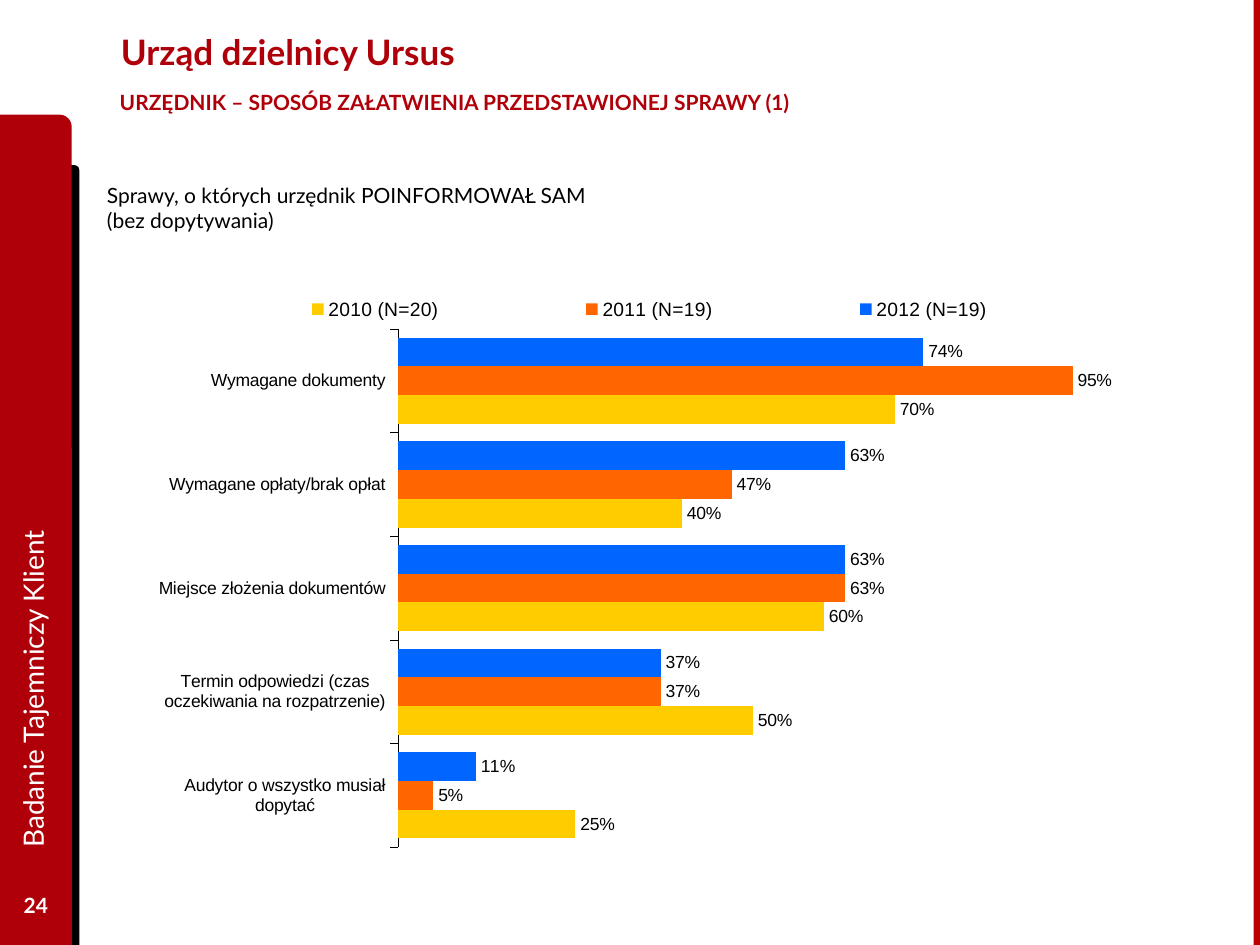
from lxml.etree import SubElement
from pptx import Presentation
from pptx.chart.data import CategoryChartData
from pptx.dml.color import RGBColor
from pptx.enum.chart import XL_CHART_TYPE, XL_LABEL_POSITION, XL_LEGEND_POSITION, XL_TICK_MARK
from pptx.enum.shapes import MSO_SHAPE
from pptx.enum.text import MSO_ANCHOR, PP_ALIGN
from pptx.oxml.ns import qn
from pptx.util import Inches, Pt

RED = RGBColor(0xAF, 0x00, 0x0A)
EDGE_RED = RGBColor(0xBD, 0x00, 0x00)
BLACK = RGBColor(0, 0, 0)
WHITE = RGBColor(0xFF, 0xFF, 0xFF)
BLUE = RGBColor(0x00, 0x66, 0xFF)
ORANGE = RGBColor(0xFF, 0x66, 0x00)
YELLOW = RGBColor(0xFF, 0xCC, 0x00)

CATEGORIES = [
    "Wymagane dokumenty",
    "Wymagane opłaty/brak opłat",
    "Miejsce złożenia dokumentów",
    "Termin odpowiedzi (czas oczekiwania na rozpatrzenie)",
    "Audytor o wszystko musiał dopytać",
]
SERIES = [
    ("2012 (N=19)", (0.74, 0.63, 0.63, 0.37, 0.11), BLUE),
    ("2011 (N=19)", (0.95, 0.47, 0.63, 0.37, 0.05), ORANGE),
    ("2010 (N=20)", (0.70, 0.40, 0.60, 0.50, 0.25), YELLOW),
]


def set_font(font, size, color, name="Lato", bold=False):
    font.name = name
    font.size = Pt(size)
    font.bold = bold
    font.color.rgb = color


def add_block(slide, kind, left, top, width, height, color, rounding=None):
    shape = slide.shapes.add_shape(
        kind, Inches(left), Inches(top), Inches(width), Inches(height))
    shape.shadow.inherit = False
    shape.fill.solid()
    shape.fill.fore_color.rgb = color
    shape.line.fill.background()
    if rounding is not None:
        shape.adjustments[0] = rounding


def fill_text(shape, text, size, color, bold=False, align=PP_ALIGN.LEFT,
              anchor=MSO_ANCHOR.TOP, wrap=True):
    frame = shape.text_frame
    frame.text = text
    frame.word_wrap = wrap
    frame.vertical_anchor = anchor
    paragraph = frame.paragraphs[0]
    paragraph.alignment = align
    for run in paragraph.runs:
        set_font(run.font, size, color, bold=bold)


def add_text(slide, left, top, width, height, text, size, color, **options):
    box = slide.shapes.add_textbox(
        Inches(left), Inches(top), Inches(width), Inches(height))
    fill_text(box, text, size, color, **options)
    return box


def set_title(slide, text):
    title = slide.shapes.title
    title.left, title.top = Inches(0.86), Inches(0.05)
    title.width, title.height = Inches(7.77), Inches(0.72)
    fill_text(title, text, 20, RED, bold=True, anchor=MSO_ANCHOR.MIDDLE)


def set_layout(parent, x, y, width, height, inner=False):
    """Place the plot area or the legend by fractions of the chart."""
    layout = parent.find(qn("c:layout"))
    if layout is None:
        layout = SubElement(parent, qn("c:layout"))
        position = 1 if parent.tag == qn("c:legend") else 0
        parent.insert(position, layout)
    manual = SubElement(layout, qn("c:manualLayout"))
    settings = [("layoutTarget", "inner")] if inner else []
    settings += [("xMode", "edge"), ("yMode", "edge"),
                 ("x", x), ("y", y), ("w", width), ("h", height)]
    for tag, value in settings:
        SubElement(manual, qn(f"c:{tag}")).set("val", str(value))


def format_axes(chart):
    category_axis = chart.category_axis
    category_axis.reverse_order = True
    category_axis.has_major_gridlines = False
    category_axis.major_tick_mark = XL_TICK_MARK.OUTSIDE
    category_axis.format.line.color.rgb = BLACK
    category_axis.format.line.width = Pt(0.25)
    set_font(category_axis.tick_labels.font, 10, BLACK, "Arial")

    value_axis = chart.value_axis
    value_axis.minimum_scale = 0
    value_axis.maximum_scale = 1
    value_axis.major_unit = 0.2
    value_axis.has_major_gridlines = False
    value_axis.visible = False


def add_bar_chart(slide):
    data = CategoryChartData(number_format="0%")
    data.categories = CATEGORIES
    for name, values, _ in SERIES:
        data.add_series(name, values)
    chart = slide.shapes.add_chart(
        XL_CHART_TYPE.BAR_CLUSTERED, Inches(1.2), Inches(2.25),
        Inches(7.83), Inches(4.52), data).chart
    chart.has_title = False
    set_font(chart.font, 9.8, BLACK, "Arial")
    format_axes(chart)

    # Bars and value labels
    plot = chart.plots[0]
    plot.gap_width = 60
    plot.overlap = 0
    plot.vary_by_categories = False
    for series, (_, _, color) in zip(plot.series, SERIES):
        series.format.fill.solid()
        series.format.fill.fore_color.rgb = color
        labels = series.data_labels
        labels.show_value = True
        labels.number_format = "0%"
        labels.number_format_is_linked = False
        labels.position = XL_LABEL_POSITION.OUTSIDE_END
        set_font(labels.font, 10, BLACK, "Arial")

    # Legend spread in one row above the bars
    chart.has_legend = True
    legend = chart.legend
    legend.position = XL_LEGEND_POSITION.RIGHT
    legend.include_in_layout = False
    set_font(legend.font, 11, BLACK, "Arial")
    plot_area = chart.element.find(".//" + qn("c:plotArea"))
    set_layout(plot_area, 0.25, 0.08, 0.72, 0.91, inner=True)
    set_layout(chart.element.find(".//" + qn("c:legend")), 0.02, 0.01, 0.97, 0.07)


def main():
    presentation = Presentation()
    presentation.slide_width = Inches(10)
    presentation.slide_height = Inches(7.5)
    slide = presentation.slides.add_slide(presentation.slide_layouts[5])

    # Side band and right edge
    corner = MSO_SHAPE.ROUND_1_RECTANGLE
    add_block(slide, corner, 0.39, 1.31, 0.24, 6.19, BLACK, 0.17)
    add_block(slide, corner, 0, 0.91, 0.57, 6.59, RED, 0.17)
    add_block(slide, MSO_SHAPE.RECTANGLE, 9.95, 0, 0.05, 7.5, EDGE_RED)

    # Headings
    set_title(slide, "Urząd dzielnicy Ursus")
    subtitle = add_text(
        slide, 0.75, 0.66, 5.72, 0.33,
        "URZĘDNIK – SPOSÓB ZAŁATWIENIA PRZEDSTAWIONEJ SPRAWY (1)",
        12, RED, bold=True, wrap=False)
    subtitle.text_frame.margin_left = Inches(0.2)
    subtitle.text_frame.margin_right = Inches(0.2)
    add_text(slide, 0.75, 1.4, 4.49, 0.5,
             "Sprawy, o których urzędnik POINFORMOWAŁ SAM \v(bez dopytywania)",
             12, BLACK)

    add_bar_chart(slide)

    # Page number and study name on the side band
    add_text(slide, 0, 6.98, 0.57, 0.4, "24", 12, WHITE, bold=True,
             align=PP_ALIGN.CENTER, anchor=MSO_ANCHOR.MIDDLE)
    study = add_text(slide, -2.62, 3.69, 5.76, 0.51, "Badanie Tajemniczy Klient",
                     16, WHITE, anchor=MSO_ANCHOR.MIDDLE)
    study.rotation = 270

    presentation.save("out.pptx")


if __name__ == "__main__":
    main()
